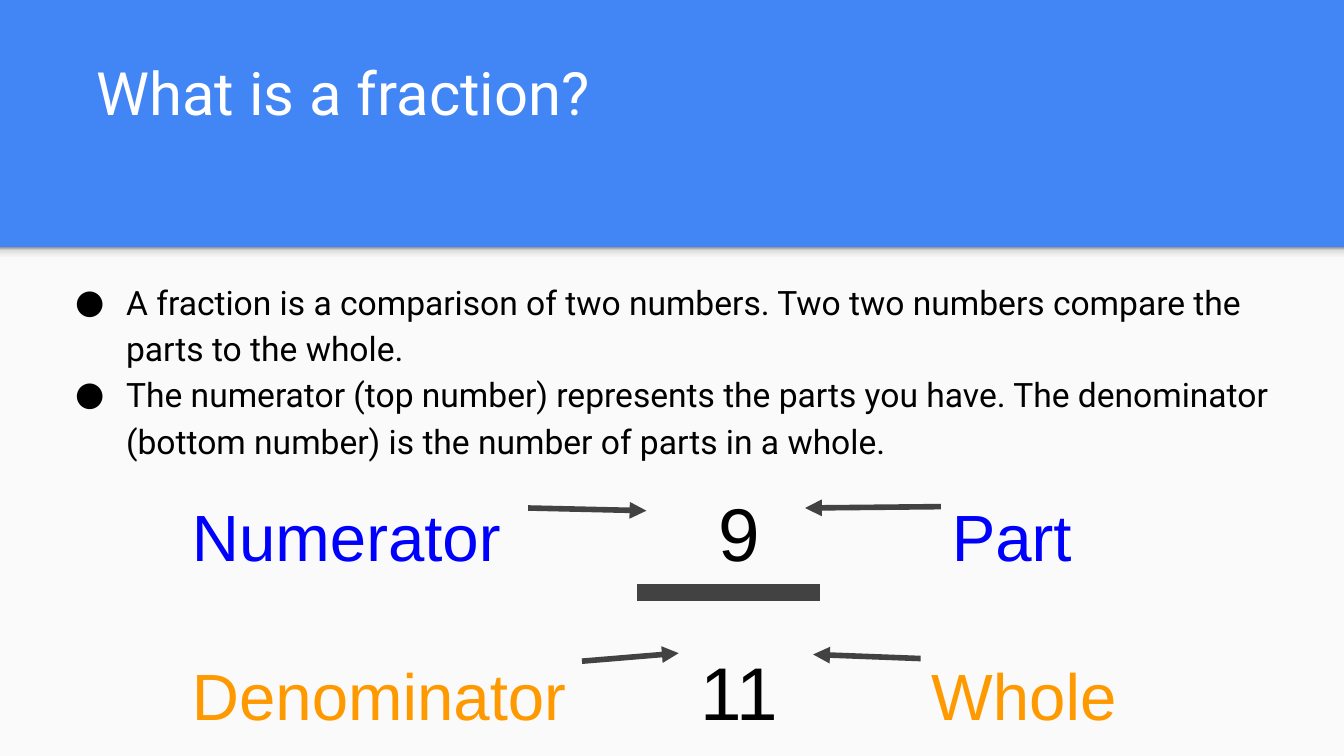
from lxml import etree
from pptx import Presentation
from pptx.dml.color import RGBColor
from pptx.enum.shapes import MSO_CONNECTOR, MSO_SHAPE
from pptx.enum.text import MSO_ANCHOR
from pptx.oxml.ns import qn
from pptx.util import Inches, Pt

RECTANGLE = MSO_SHAPE.RECTANGLE
STRAIGHT = MSO_CONNECTOR.STRAIGHT
TOP, BOTTOM = MSO_ANCHOR.TOP, MSO_ANCHOR.BOTTOM

COLORS = {
    "header": "4285F4", "panel": "FAFAFA", "title": "FFFFFF", "text": "000000",
    "top": "0000FF", "bottom": "FF9900", "line": "424242",
    "shade_light": "F9F9F9", "shade_middle": "DEDEDE", "shade_dark": "999999",
}

# The slide is a grid of square cells, 100 columns by 56.25 rows.
COLUMNS, ROWS = 100, 56.25
CELL = Inches(0.1)
HEADER_ROWS = 18.4

deck = Presentation()
deck.slide_width, deck.slide_height = int(COLUMNS * CELL), int(ROWS * CELL)
page = deck.slides.add_slide(deck.slide_layouts[6])
page.background.fill.solid()
page.background.fill.fore_color.rgb = RGBColor.from_string(COLORS["header"])


def add_text_frame(place, text, anchor=TOP):
    """Add a wrapping text box, placed in cells, with margins of one cell."""
    box = page.shapes.add_textbox(*[int(count * CELL) for count in place])
    frame = box.text_frame
    frame.word_wrap = True
    frame.vertical_anchor = anchor
    frame.margin_left = frame.margin_right = CELL
    frame.margin_top = frame.margin_bottom = CELL
    frame.text = text
    return frame


def format_span(span, font, size, color):
    span.font.name = font
    span.font.size = Pt(size)
    span.font.color.rgb = RGBColor.from_string(COLORS[color])


# Light panel with a shaded upper edge
panel, shade = [
    page.shapes.add_shape(RECTANGLE, 0, int(HEADER_ROWS * CELL),
                          deck.slide_width, int(height * CELL))
    for height in (ROWS - HEADER_ROWS, 1.2)]
panel.fill.solid()
panel.fill.fore_color.rgb = RGBColor.from_string(COLORS["panel"])
shade.fill.gradient()
for shape in (panel, shade):
    shape.line.fill.background()
    shape.shadow.inherit = False

gradient = shade.fill._fill._gradFill
stops = gradient.find(qn("a:gsLst"))
for stop in list(stops):
    stops.remove(stop)
for percent, name in ((0, "shade_light"), (36, "shade_light"),
                      (80, "shade_middle"), (100, "shade_dark")):
    stop = etree.SubElement(stops, qn("a:gs"), pos=str(percent * 1000))
    etree.SubElement(stop, qn("a:srgbClr"), val=COLORS[name])
gradient.find(qn("a:lin")).set("ang", str(270 * 60000))

# Title and bullets
title = add_text_frame((6.2, 2.1, 89.9, 8.4), "What is a fraction?", BOTTOM)
format_span(title.paragraphs[0].runs[0], "Roboto", 32, "title")

bullets = add_text_frame(
    (3.4, 19.5, 93.2, 13.4),
    "A fraction is a comparison of two numbers. Two two numbers compare the "
    "parts to the whole.\n"
    "The numerator (top number) represents the parts you have. The denominator "
    "(bottom number) is the number of parts in a whole.")
for para in bullets.paragraphs:
    format_span(para.runs[0], "Roboto", 18, "text")
    para.line_spacing = 1.15
    properties = para._p.get_or_add_pPr()
    properties.set("marL", str(Inches(0.5)))
    properties.set("indent", str(Inches(-0.38)))
    bullet_color = etree.SubElement(properties, qn("a:buClr"))
    etree.SubElement(bullet_color, qn("a:srgbClr"), val=COLORS["text"])
    etree.SubElement(properties, qn("a:buSzPts"), val="1800")
    etree.SubElement(properties, qn("a:buFont"), typeface="Roboto")
    etree.SubElement(properties, qn("a:buChar"), char="●")

# The labelled fraction: one line per number, its words centred on tab stops
fraction = add_text_frame((13.3, 35.2, 74.9, 27.9), "\n")
for para, color, words, tab_stops in zip(
        fraction.paragraphs, ("top", "bottom"),
        (("Numerator", "\t9", "\tPart"), ("Denominator", "\t11", "\tWhole")),
        ((40.7, 61), (40.7, 61.9))):
    for word, size, tint in zip(words, (35, 40, 35), (color, "text", color)):
        span = para.add_run()
        span.text = word
        format_span(span, "Arial", size, tint)
    tabs = etree.SubElement(para._p.get_or_add_pPr(), qn("a:tabLst"))
    for position in tab_stops:
        etree.SubElement(tabs, qn("a:tab"), pos=str(int(position * CELL)),
                         algn="ctr")
fraction.paragraphs[1].space_before = Pt(37.5)

# Fraction bar and arrows
for ends, weight, has_head in (
        ((47.4, 44.1, 61, 44.1), 9, False),
        ((39.3, 37.8, 48.1, 38), 3, True),
        ((70, 37.7, 59.9, 37.8), 3, True),
        ((43.3, 49.2, 50.5, 48.6), 3, True),
        ((68.5, 49, 60.5, 48.7), 3, True)):
    line = page.shapes.add_connector(
        STRAIGHT, *[int(count * CELL) for count in ends])
    line.line.width = Pt(weight)
    line.line.color.rgb = RGBColor.from_string(COLORS["line"])
    if has_head:
        etree.SubElement(line.line._get_or_add_ln(), qn("a:tailEnd"),
                         type="triangle")
    etree.SubElement(line._element.spPr, qn("a:effectLst"))

deck.save("out.pptx")
